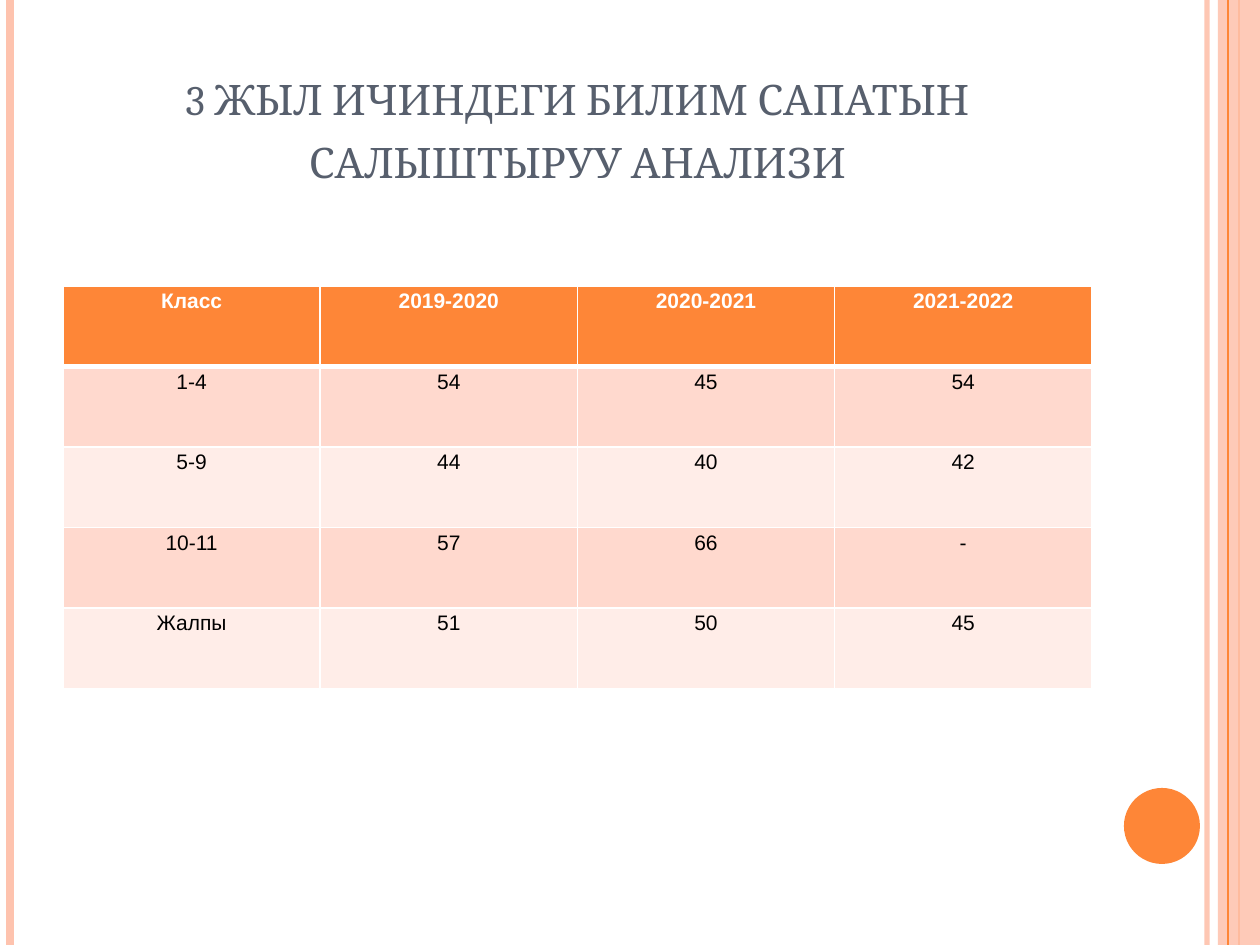
from pptx import Presentation
from pptx.dml.color import RGBColor
from pptx.enum.shapes import MSO_CONNECTOR, MSO_SHAPE
from pptx.enum.text import MSO_ANCHOR, MSO_AUTO_SIZE, PP_ALIGN
from pptx.oxml.ns import qn
from pptx.util import Emu, Pt
from lxml import etree

STRAIGHT = MSO_CONNECTOR.STRAIGHT
RECTANGLE, OVAL = MSO_SHAPE.RECTANGLE, MSO_SHAPE.OVAL
CENTER = PP_ALIGN.CENTER
BOTTOM = MSO_ANCHOR.BOTTOM
NO_AUTOFIT = MSO_AUTO_SIZE.NONE

PX = 914400 // 126  # EMU in one px
WIDTH, HEIGHT = 1260, 945


class Theme:
    orange = RGBColor.from_string("FE8637")
    peach = RGBColor.from_string("FEC3AE")
    slate = RGBColor.from_string("575F6D")
    white = RGBColor.from_string("FFFFFF")
    black = RGBColor.from_string("000000")
    bands = [RGBColor.from_string("FFD9CE"), RGBColor.from_string("FFEDE8")]
    title_font, title_size = "Cambria", Pt(30)
    table_font, table_size = "Arial", Pt(12)


def set_alpha(parent, percent):
    color = next(parent.iter(qn("a:srgbClr")))
    etree.SubElement(color, qn("a:alpha")).set("val", str(percent * 1000))


def add_border(cell, side, points):
    border = etree.SubElement(cell._tc.get_or_add_tcPr(), qn(f"a:{side}"))
    border.set("w", str(Pt(points)))
    fill = etree.SubElement(border, qn("a:solidFill"))
    etree.SubElement(fill, qn("a:srgbClr")).set("val", str(Theme.white))


prs = Presentation()
prs.slide_width, prs.slide_height = Emu(WIDTH * PX), Emu(HEIGHT * PX)
slide = prs.slides.add_slide(prs.slide_layouts[5])
shapes = slide.shapes

# Vertical stripes; the wide band lies over the thin lines before it
stripes = [
    (1207, Theme.peach, 3, 93),
    (10, Theme.peach, 4.5, 100),
    (1239, Theme.orange, 1.5, 100),
    "band",
    (1228, Theme.orange, 0.75, 100),
]
for stripe in stripes:
    if stripe == "band":
        band = shapes.add_shape(RECTANGLE, 1218 * PX, 0, 42 * PX, HEIGHT * PX)
        band.shadow.inherit = False
        band.fill.solid()
        band.fill.fore_color.rgb = Theme.peach
        band.line.fill.background()
        set_alpha(band._element.spPr, 87)
        continue
    x, color, points, opacity = stripe
    rule = shapes.add_connector(STRAIGHT, x * PX, 0, x * PX, HEIGHT * PX)
    rule.line.color.rgb = color
    rule.line.width = Pt(points)
    if opacity < 100:
        set_alpha(rule._element.spPr, opacity)
    etree.SubElement(rule._element.spPr, qn("a:effectLst"))

# Orange dot
dot = shapes.add_shape(OVAL, 1124 * PX, 788 * PX, 76 * PX, 76 * PX)
dot.shadow.inherit = False
dot.fill.solid()
dot.fill.fore_color.rgb = Theme.orange
dot.line.fill.background()

# Title
title = shapes.title
title.left, title.top = 63 * PX, 38 * PX
title.width, title.height = 1029 * PX, 157 * PX
heading = title.text_frame
heading.text = "3 жыл ичиндеги билим сапатын салыштыруу анализи"
heading.word_wrap = True
heading.auto_size = NO_AUTOFIT
heading.vertical_anchor = BOTTOM
heading.paragraphs[0].alignment = CENTER
heading_run = heading.paragraphs[0].runs[0]
heading_run.font.name = Theme.title_font
heading_run.font.size = Theme.title_size
heading_run.font.color.rgb = Theme.slate
heading_run.font._element.set("cap", "small")

# Quality of knowledge by class and school year
results = [
    ["Класс", "2019-2020", "2020-2021", "2021-2022"],
    ["1-4", "54", "45", "54"],
    ["5-9", "44", "40", "42"],
    ["10-11", "57", "66", "-"],
    ["Жалпы", "51", "50", "45"],
]
table = shapes.add_table(len(results), len(results[0]),
                         63 * PX, 286 * PX, 1029 * PX, 403 * PX).table
for r, values in enumerate(results):
    is_header = r == 0
    for c, value in enumerate(values):
        cell = table.cell(r, c)
        cell.margin_left = cell.margin_right = 9 * PX
        cell.margin_top = cell.margin_bottom = 0
        for side in ("lnL", "lnR", "lnT", "lnB"):
            heavy = (is_header and side == "lnB") or (r == 1 and side == "lnT")
            add_border(cell, side, 3 if heavy else 1)
        cell.fill.solid()
        cell.fill.fore_color.rgb = Theme.orange if is_header else Theme.bands[(r - 1) % 2]
        cell.text_frame.text = value
        paragraph = cell.text_frame.paragraphs[0]
        paragraph.alignment = CENTER
        paragraph.line_spacing = 1.15
        font = paragraph.runs[0].font
        font.name, font.size = Theme.table_font, Theme.table_size
        font.bold = is_header
        font.color.rgb = Theme.white if is_header else Theme.black

prs.save("out.pptx")
